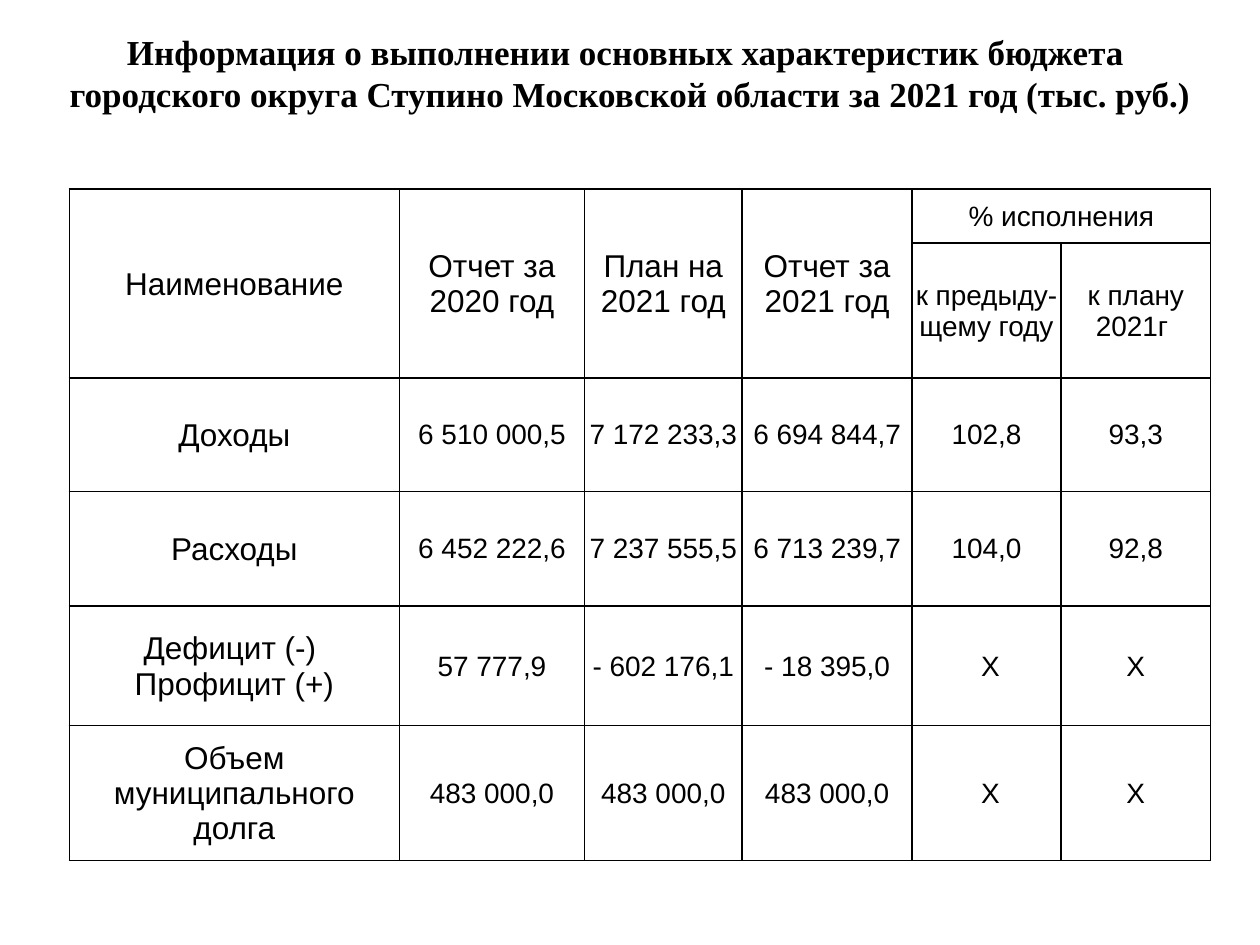
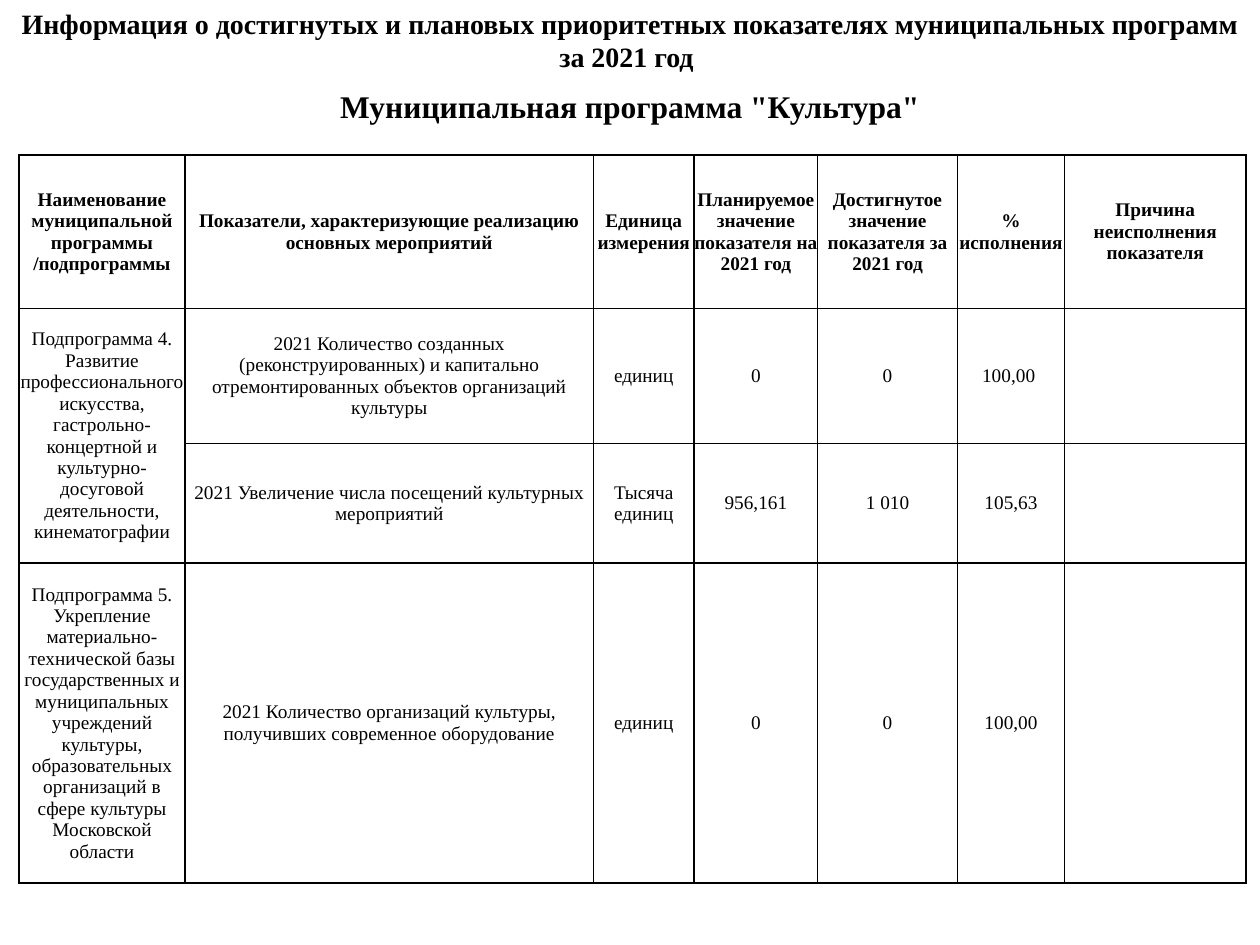
from pptx import Presentation, util as u
from pptx.dml.color import RGBColor
from pptx.enum import text
from pptx.oxml import parse_xml
from pptx.oxml.ns import nsdecls

INK = "000000"
SERIF = "Times New Roman"
SANS = "Arial"
EDGE = ('<a:{side} {ns} w="12700"><a:solidFill><a:srgbClr val="{ink}"/>'
        '</a:solidFill></a:{side}>')


def color(code):
    return RGBColor.from_string(code)


class Deck:
    """Holds the shared style and the current slide."""

    def __init__(self):
        self.prs = Presentation()
        self.prs.slide_width = u.Inches(10)
        self.prs.slide_height = u.Inches(7.5)

    def words(self, frame, copy, size, face, bold):
        """Fill a text frame with centred text, one paragraph a line."""
        frame.text = copy
        frame.word_wrap = True
        for par in frame.paragraphs:
            par.alignment = text.PP_ALIGN.CENTER
            font = par.font
            font.size, font.name, font.bold = u.Pt(size), face, bold
            font.color.rgb = color(INK)

    def head(self, shape, copy, top, height, size):
        """Place a full-width heading."""
        shape.left, shape.top = u.Inches(0), u.Inches(top)
        shape.width, shape.height = u.Inches(10), u.Inches(height)
        frame = shape.text_frame
        self.words(frame, copy, size, SERIF, True)
        frame.auto_size = text.MSO_AUTO_SIZE.NONE
        frame.vertical_anchor = text.MSO_ANCHOR.TOP

    def slide(self, copy, top, height, size):
        """Start a slide with its title."""
        self.page = self.prs.slides.add_slide(self.prs.slide_layouts[5])
        self.head(self.page.shapes.title, copy, top, height, size)

    def label(self, copy, top, height, size):
        box = self.page.shapes.add_textbox(0, 0, 0, 0)
        self.head(box, copy, top, height, size)

    def cell(self, cell, copy, inset, size, face, bold):
        cell.margin_left = cell.margin_right = cell.margin_top = u.Inches(inset)
        cell.margin_bottom = 0
        cell.vertical_anchor = text.MSO_ANCHOR.MIDDLE
        self.words(cell.text_frame, copy, size, face, bold)
        props = cell._tc.get_or_add_tcPr()
        for side in ("lnL", "lnR", "lnT", "lnB"):
            props.append(parse_xml(
                EDGE.format(side=side, ns=nsdecls("a"), ink=INK)))
        cell.fill.background()

    def table(self, left, top, cols, rows, data, spans, style, inset):
        """Draw a grid; style(row, col) gives size, face and bold."""
        grid = self.page.shapes.add_table(
            len(rows), len(cols), u.Inches(left), u.Inches(top),
            u.Inches(sum(cols)), u.Inches(sum(rows))).table
        grid.first_row = grid.horz_banding = False
        for col, width in zip(grid.columns, cols):
            col.width = u.Inches(width)
        for row, height in zip(grid.rows, rows):
            row.height = u.Inches(height)
        for r, line in enumerate(data):
            for c, copy in enumerate(line):
                self.cell(grid.cell(r, c), copy, inset, *style(r, c))
        for first, last in spans:
            grid.cell(*first).merge(grid.cell(*last))


BUDGET = [
    ["Наименование", "Отчет за 2020 год", "План на 2021 год",
     "Отчет за 2021 год", "% исполнения", ""],
    ["", "", "", "", "к предыду-щему году", "к плану 2021г "],
    ["Доходы", "6 510 000,5", "7 172 233,3", "6 694 844,7", "102,8", "93,3"],
    ["Расходы", "6 452 222,6", "7 237 555,5", "6 713 239,7", "104,0", "92,8"],
    ["Дефицит (-) \vПрофицит (+)", "57 777,9", "- 602 176,1", "- 18 395,0",
     " Х", "Х"],
    ["Объем муниципального долга", "483 000,0", "483 000,0", "483 000,0",
     " Х", "Х"],
]

CULTURE = [
    ["Наименование муниципальной программы /подпрограммы",
     "Показатели, характеризующие реализацию основных мероприятий",
     "Единица измерения", "Планируемое значение показателя на 2021 год",
     "Достигнутое значение показателя за 2021 год", "% исполнения",
     "Причина неисполнения показателя"],
    ["Подпрограмма 4. Развитие профессионального искусства, "
     "гастрольно-концертной и культурно-досуговой деятельности, "
     "кинематографии",
     "2021 Количество созданных (реконструированных) и капитально "
     "отремонтированных объектов организаций культуры",
     "единиц", "0", "0", "100,00 ", ""],
    ["", "2021 Увеличение числа посещений культурных мероприятий",
     "Тысяча единиц", "956,161", "1 010", "105,63", ""],
    ["Подпрограмма 5. Укрепление материально-технической базы "
     "государственных и муниципальных учреждений культуры, "
     "образовательных организаций в сфере культуры Московской области",
     "2021 Количество организаций культуры, получивших современное "
     "оборудование",
     "единиц", "0", "0", "100,00", ""],
]


def budget(deck):
    deck.slide("Информация о выполнении основных характеристик бюджета \n"
               "городского округа Ступино Московской области за 2021 год "
               "(тыс. руб.)", 0.19, 0.77, 20)
    spans = [((0, c), (1, c)) for c in range(4)] + [((0, 4), (0, 5))]

    def style(row, col):
        large = col == 0 or (row == 0 and col < 4)
        return (18 if large else 16), SANS, False

    deck.table(0.55, 1.5, [2.62, 1.47, 1.25, 1.35, 1.18, 1.19],
               [0.43, 1.07, 0.9, 0.91, 0.95, 1.07], BUDGET, spans, style, 0.01)


def culture(deck):
    deck.slide("Информация о достигнутых и плановых приоритетных показателях "
               "муниципальных программ за 2021 год ", 0, 0.64, 16)
    deck.label('Муниципальная программа "Культура"', 0.64, 0.4, 18)
    deck.table(0.15, 1.23, [1.32, 3.24, 0.8, 0.98, 1.11, 0.85, 1.44],
               [1.22, 1.07, 0.95, 2.54], CULTURE, [((1, 0), (2, 0))],
               lambda row, col: (11, SERIF, row == 0), 0)


def main():
    deck = Deck()
    budget(deck)
    culture(deck)
    deck.prs.save("out.pptx")


if __name__ == "__main__":
    main()
